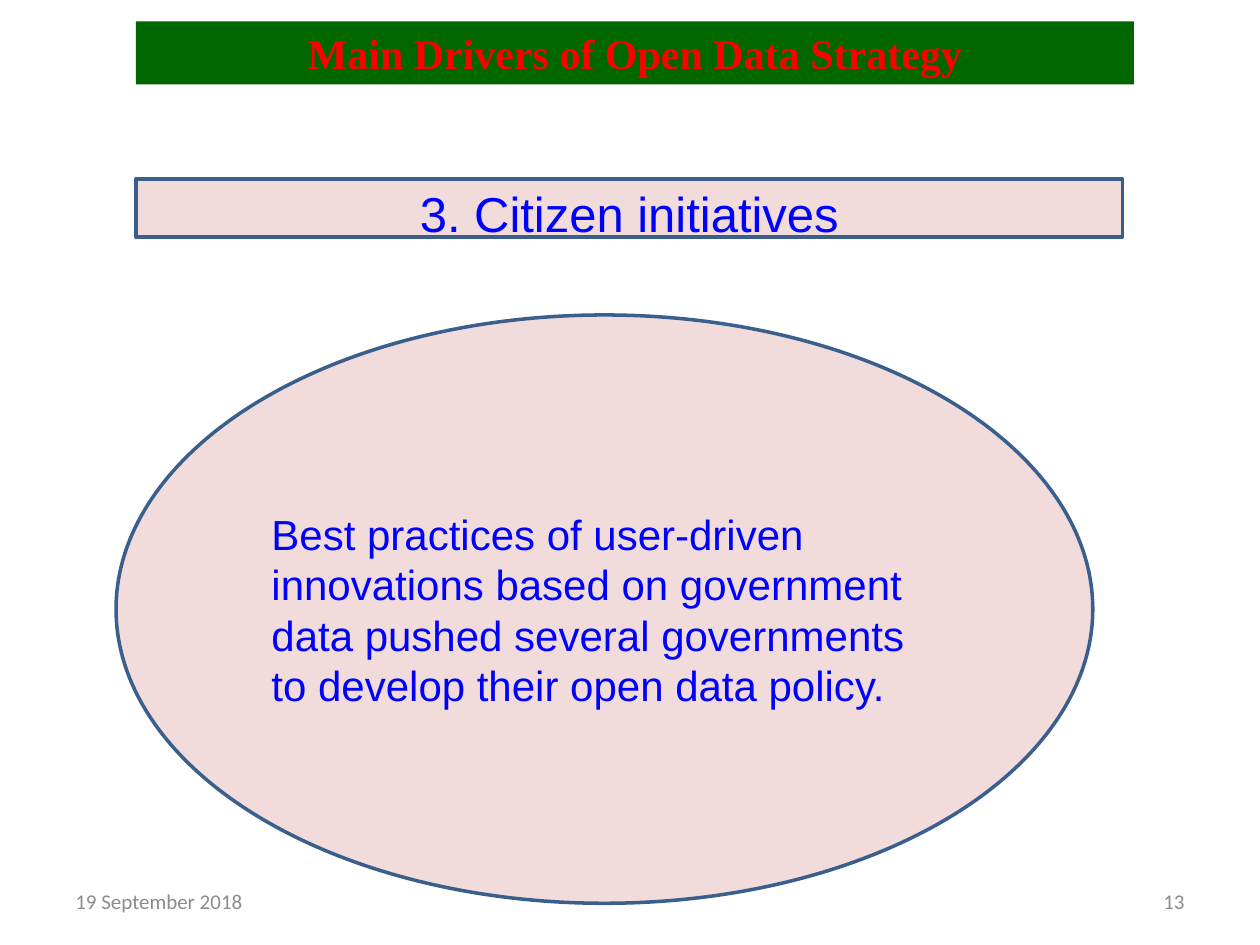
from pptx import Presentation
from pptx.dml.color import RGBColor
from pptx.enum.shapes import MSO_SHAPE as Shape
from pptx.enum.text import MSO_ANCHOR as Anchor, PP_ALIGN as Align
from pptx.util import Cm, Pt

GREEN = RGBColor(0x00, 0x66, 0x00)
RED = RGBColor(0xFF, 0x00, 0x00)
BLUE = RGBColor(0x00, 0x00, 0xFF)
PINK = RGBColor(0xF2, 0xDC, 0xDB)
OUTLINE = RGBColor(0x3A, 0x5F, 0x8C)
GRAY = RGBColor(0x8C, 0x8C, 0x8C)

TITLE = "Main Drivers of Open Data Strategy"
TITLE_BOX = (2.74, 0.43, 20.12, 1.27)

# text, left, alignment
FOOTERS = [
    ("19 September 2018", 1.27, Align.LEFT),
    ("13", 18.21, Align.RIGHT),
]
FOOTER_TOP, FOOTER_WIDTH, FOOTER_HEIGHT = 17.65, 5.92, 1.02

# preset, box, text, size, alignment, line spacing, space after
PANELS = [
    (Shape.OVAL, (2.34, 6.35, 19.69, 11.86),
     "Best practices of user-driven innovations based on government data "
     "pushed several governments to develop their open data policy.",
     24, Align.LEFT, 1.0, 0),
    (Shape.RECTANGLE, (2.74, 3.61, 19.89, 1.17),
     "3. Citizen initiatives", 28, Align.CENTER, 1.15, 10),
]


def cm_box(box):
    return [Cm(length) for length in box]


def write(shape, text, font_name, size, color, align, bold=False):
    """Fill the shape with one vertically centred paragraph and return it."""
    frame = shape.text_frame
    frame.word_wrap = True
    frame.vertical_anchor = Anchor.MIDDLE
    paragraph = frame.paragraphs[0]
    paragraph.text = text
    paragraph.alignment = align
    font = paragraph.font
    font.name, font.size, font.bold = font_name, Pt(size), bold
    font.color.rgb = color
    return paragraph


def fill(shape, color):
    shape.fill.solid()
    shape.fill.fore_color.rgb = color


def main():
    deck = Presentation()
    deck.slide_width, deck.slide_height = Cm(25.4), Cm(19.05)
    slide = deck.slides.add_slide(deck.slide_layouts[5])
    shapes = slide.shapes

    title = shapes.title
    title.left, title.top, title.width, title.height = cm_box(TITLE_BOX)
    fill(title, GREEN)
    write(title, TITLE, "Times New Roman", 24, RED, Align.CENTER, bold=True)

    for text, left, align in FOOTERS:
        footer = shapes.add_textbox(
            *cm_box((left, FOOTER_TOP, FOOTER_WIDTH, FOOTER_HEIGHT)))
        write(footer, text, "Calibri", 12, GRAY, align)

    for preset, box, text, size, align, spacing, after in PANELS:
        panel = shapes.add_shape(preset, *cm_box(box))
        panel.shadow.inherit = False
        fill(panel, PINK)
        panel.line.color.rgb = OUTLINE
        panel.line.width = Pt(2)
        paragraph = write(panel, text, "Arial", size, BLUE, align)
        paragraph.line_spacing = spacing
        paragraph.space_after = Pt(after)

    deck.save("out.pptx")


if __name__ == "__main__":
    main()
